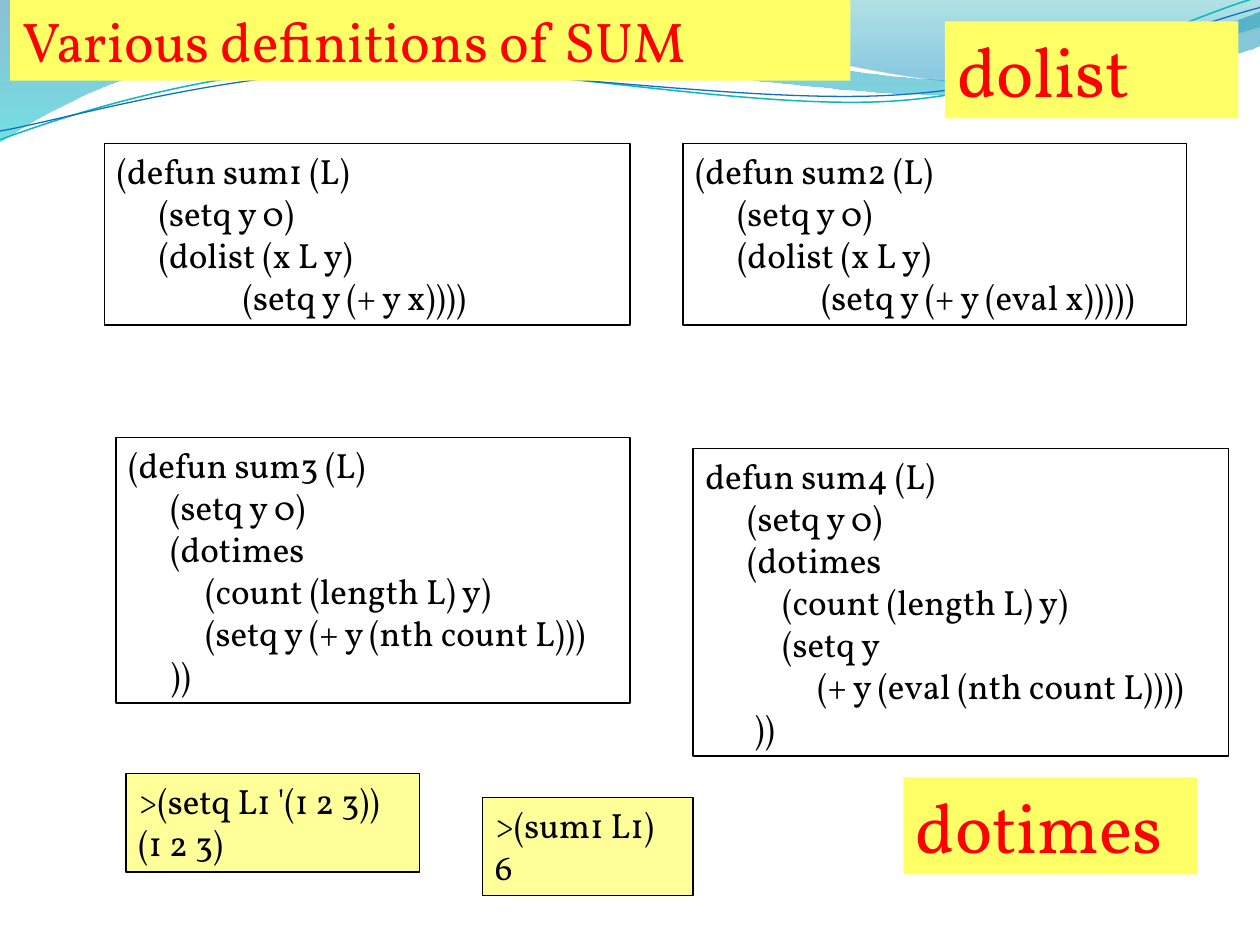
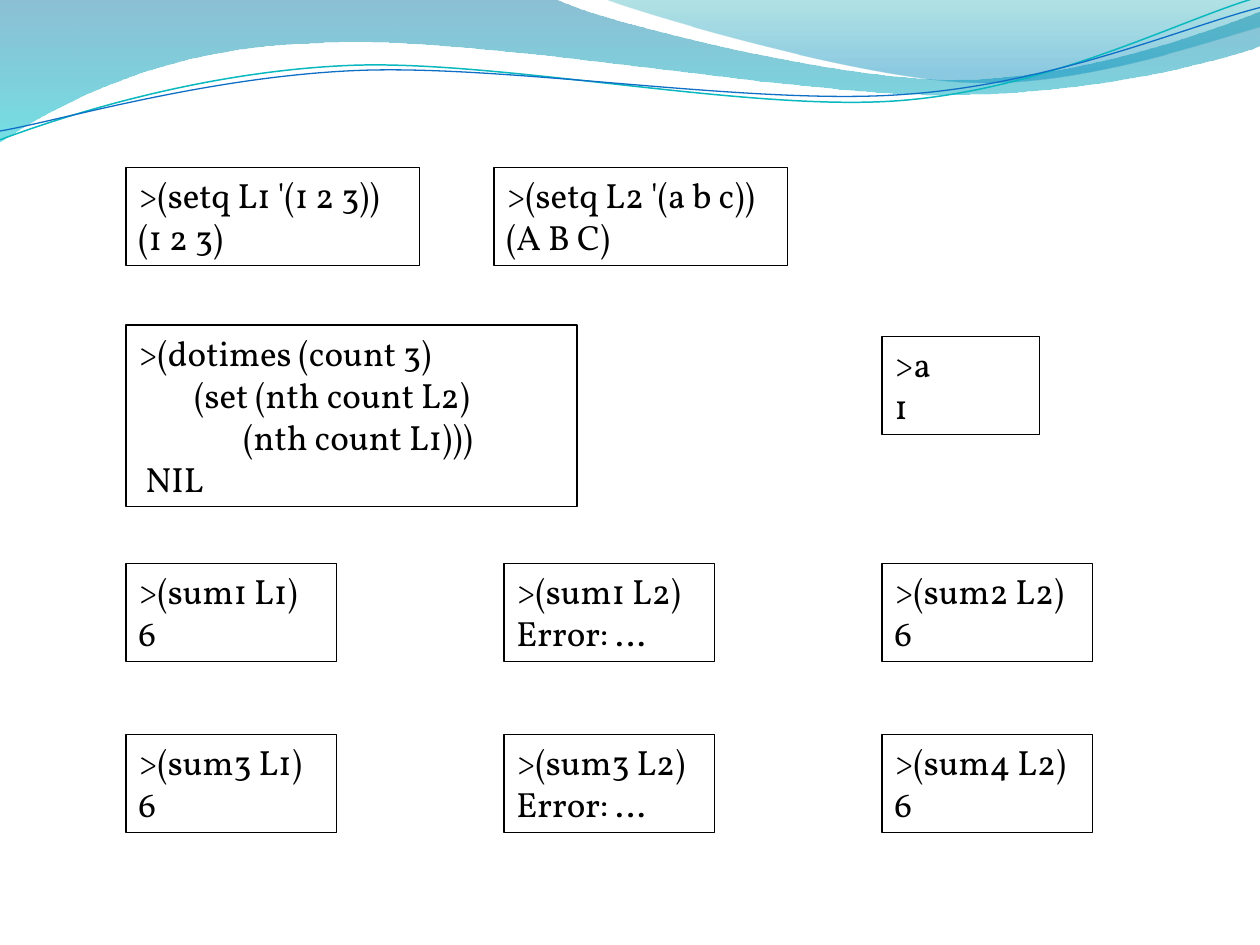
from lxml import etree
from pptx import Presentation
from pptx.dml.color import RGBColor
from pptx.enum.shapes import MSO_SHAPE
from pptx.enum.text import MSO_ANCHOR, MSO_AUTO_SIZE, PP_ALIGN
from pptx.oxml.ns import qn
from pptx.util import Inches, Pt

RECT = MSO_SHAPE.RECTANGLE
TOP = MSO_ANCHOR.TOP
LEFT = PP_ALIGN.LEFT
FIXED = MSO_AUTO_SIZE.NONE

FONT = "Vollkorn"
BLACK, RED = "000000", "FF0000"
BRIGHT, PALE = "FFFF66", "FFFF99"
SPACE = Inches(1) / 18  # width of one column of code indent
PAIR_H = 0.78           # height of a prompt and its reply

# Each wave is a list of parts: 2 numbers for a line, 6 for a curve.
BAND = [(0, 0), (4.4, -0.01), (4.76, 0.17, 6.64, 0.63, 7.58, 0.63),
        (8.53, 0.63, 9.58, 0.26, 10, 0.09), (10.01, 0.36),
        (9.83, 0.44, 8.7, 0.76, 7.46, 0.75),
        (6.22, 0.75, 3.82, 0.28, 2.57, 0.34),
        (1.29, 0.36, 0.46, 0.83, -0.01, 1.13), (0, 0)]
CREST = [(4.79, -0.01), (5.09, 0.11, 6.82, 0.62, 7.69, 0.65),
         (8.56, 0.69, 9.61, 0.32, 10, 0.21), (10, 0), (4.79, -0.01)]
TEAL = [(0, 1.11), (0.48, 0.93, 1.58, 0.57, 2.77, 0.52),
        (3.95, 0.47, 5.93, 0.89, 7.13, 0.8),
        (8.33, 0.71, 9.38, 0.15, 9.98, -0.02)]
BLUE = [(0, 1.04), (0.47, 0.96, 1.64, 0.61, 2.83, 0.56),
        (4.03, 0.51, 5.97, 0.84, 7.17, 0.75),
        (8.36, 0.67, 9.41, 0.21, 10, 0.06)]


def color(text):
    return RGBColor.from_string(text)


def add_wave(slide, parts, close):
    """Draw all points as lines, then join each three into a curve."""
    points = [(Inches(part[i]), Inches(part[i + 1]))
              for part in parts for i in range(0, len(part), 2)]
    pen = slide.shapes.build_freeform(*points[0])
    pen.add_line_segments(points[1:], close=close)
    wave = pen.convert_to_shape()
    wave.shadow.inherit = False
    nodes = iter(list(wave.element.spPr.iter(qn("a:lnTo"))))
    for part in parts[1:]:
        first = next(nodes)
        if len(part) == 6:
            first.tag = qn("a:cubicBezTo")
            for _ in range(2):
                extra = next(nodes)
                first.append(extra[0])
                extra.getparent().remove(extra)
    return wave


def add_fade(slide, parts, stops):
    """Add a wave with a see-through fill that fades downwards."""
    wave = add_wave(slide, parts, True)
    wave.line.fill.background()
    wave.fill.gradient()
    wave.fill.gradient_angle = 270
    for stop, (place, tint, _) in zip(wave.fill.gradient_stops, stops):
        stop.position = place
        stop.color.rgb = color(tint)
    tints = wave.element.spPr.iter(qn("a:srgbClr"))
    for node, (_, _, alpha) in zip(list(tints), stops):
        etree.SubElement(node, qn("a:alpha")).set("val", str(alpha * 1000))
    return wave


def add_curve(slide, parts, tint, width):
    wave = add_wave(slide, parts, False)
    wave.fill.background()
    wave.line.color.rgb = color(tint)
    wave.line.width = Pt(width)
    return wave


def dress_master(prs, slide):
    """Draw the waves and move them to the master that all slides share."""
    waves = [
        add_fade(slide, BAND, [(0, "0074A1", 45), (1, "00C6CF", 55)]),
        add_fade(slide, CREST, [(0, "00A1A9", 30), (0.8, "008BBF", 45)]),
        add_curve(slide, TEAL, "0AB8BF", 0.85),
        add_curve(slide, BLUE, "0F6FC6", 0.75),
    ]
    tree = prs.slide_master.shapes.element
    for wave in waves:
        tree.append(wave.element)


def write(shape, lines, size, tint):
    """Fill a shape with (indent in columns, text) lines."""
    frame = shape.text_frame
    frame.word_wrap = True
    frame.auto_size = FIXED
    frame.vertical_anchor = TOP
    for i, (indent, text) in enumerate(lines):
        para = frame.add_paragraph() if i else frame.paragraphs[0]
        para.alignment = LEFT
        props = para._p.get_or_add_pPr()
        props.set("marL", str(round(indent * SPACE)))
        props.set("indent", "0")
        run = para.add_run()
        run.text = text
        run.font.name = FONT
        run.font.size = Pt(size)
        run.font.color.rgb = color(tint)


def paint(shape, fill):
    shape.fill.solid()
    shape.fill.fore_color.rgb = color(fill)


def add_box(slide, box):
    shape = slide.shapes.add_shape(RECT, *map(Inches, box))
    shape.shadow.inherit = False
    return shape


def add_code(slide, box, lines, fill=None):
    shape = add_box(slide, box)
    if fill:
        paint(shape, fill)
    else:
        shape.fill.background()
    shape.line.color.rgb = color(BLACK)
    shape.line.width = Pt(0.75)
    write(shape, lines, 20, BLACK)


def add_pair(slide, left, top, width, prompt, reply, fill=None):
    """Add a box with a prompt and the reply below it."""
    add_code(slide, (left, top, width, PAIR_H),
             [(0, prompt), (0, reply)], fill)


def add_label(slide, left, top, text):
    shape = add_box(slide, (left, top, 2.33, 0.77))
    paint(shape, BRIGHT)
    shape.line.fill.background()
    write(shape, [(0, text)], 40, RED)


def set_title(slide, box, text):
    title = slide.shapes.title
    title.left, title.top, title.width, title.height = map(Inches, box)
    paint(title, BRIGHT)
    write(title, [(0, text)], 32, RED)


def fill_sums(slide):
    set_title(slide, (0.08, 0, 6.67, 0.64), "Various definitions of SUM")
    lists = [(6, "(setq y 0)"), (6, "(dolist (x L y)")]
    times = [(6, "(setq y 0)"), (6, "(dotimes"),
             (11, "(count (length L) y)")]
    add_code(slide, (0.83, 1.14, 4.17, 1.44), [
        (0, "(defun sum1 (L)"), *lists, (18, "(setq y (+ y x))))")])
    add_code(slide, (5.42, 1.14, 4, 1.44), [
        (0, "(defun sum2 (L)"), *lists, (18, "(setq y (+ y (eval x)))))")])
    add_code(slide, (0.92, 3.47, 4.08, 2.11), [
        (0, "(defun sum3 (L)"), *times,
        (11, "(setq y (+ y (nth count L)))"), (6, "))")])
    add_code(slide, (5.5, 3.56, 4.25, 2.44), [
        (0, "defun sum4 (L)"), *times, (11, "(setq y"),
        (16, "(+ y (eval (nth count L))))"), (7, "))")])
    add_label(slide, 7.17, 6.17, "dotimes")
    add_label(slide, 7.5, 0.17, "dolist")
    add_pair(slide, 1, 6.14, 2.33, ">(setq L1 '(1 2 3))", "(1 2 3)", PALE)
    add_pair(slide, 3.83, 6.33, 1.67, ">(sum1 L1)", "6", PALE)


def fill_tests(slide):
    add_pair(slide, 1, 1.33, 2.33, ">(setq L1 '(1 2 3))", "(1 2 3)")
    add_pair(slide, 3.92, 1.33, 2.33, ">(setq L2 '(a b c))", "(A B C)")
    add_code(slide, (1, 2.58, 3.58, 1.44), [
        (0, ">(dotimes (count 3)"), (8, "(set (nth count L2)"),
        (15, "(nth count L1)))"), (1, "NIL")])
    add_pair(slide, 7, 2.67, 1.25, ">a", "1")
    calls = [["sum1 L1", "sum1 L2", "sum2 L2"],
             ["sum3 L1", "sum3 L2", "sum4 L2"]]
    for top, row in zip((4.47, 5.83), calls):
        for i, (call, reply) in enumerate(zip(row, ("6", "Error: …", "6"))):
            add_pair(slide, 1 + 3 * i, top, 1.67, f">({call})", reply)


def main():
    prs = Presentation()
    prs.slide_width, prs.slide_height = Inches(10), Inches(7.5)
    sums = prs.slides.add_slide(prs.slide_layouts[5])
    tests = prs.slides.add_slide(prs.slide_layouts[6])
    dress_master(prs, sums)
    fill_sums(sums)
    fill_tests(tests)
    prs.save("out.pptx")


if __name__ == "__main__":
    main()
